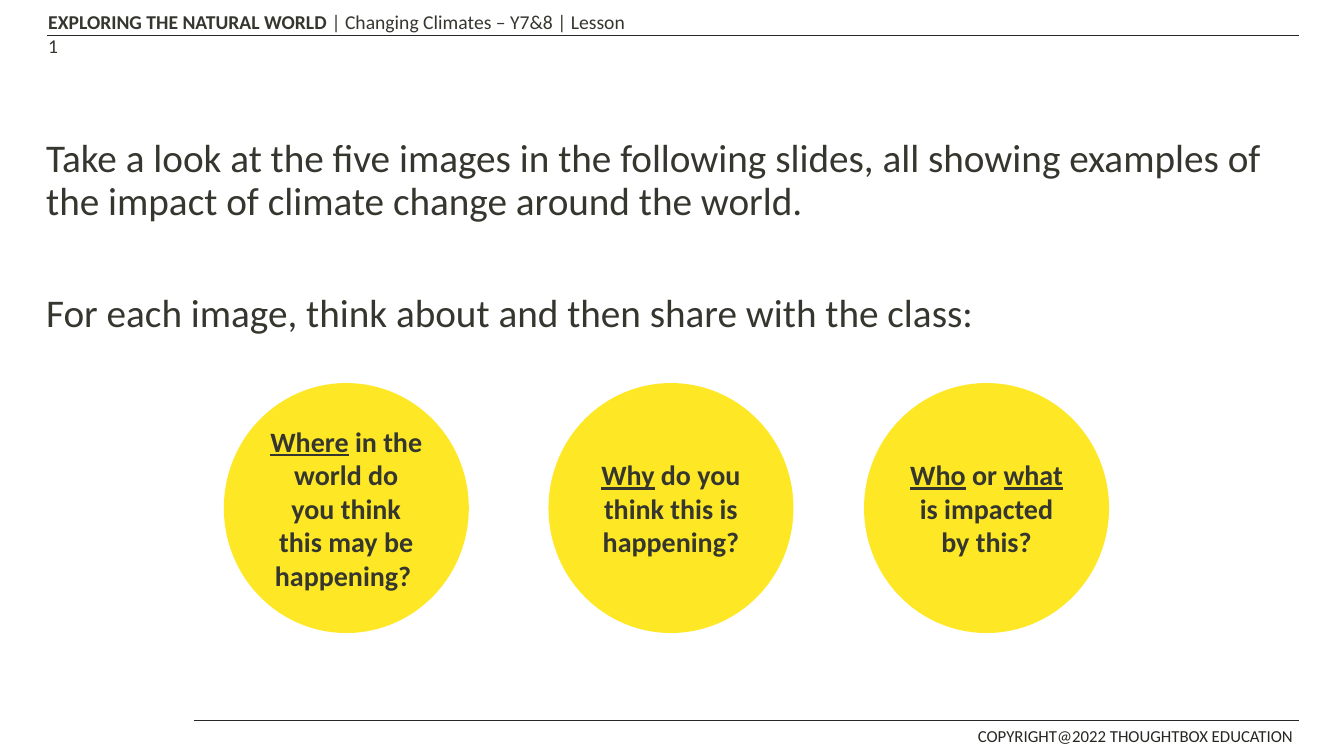
import pptx
import pptx.dml.color
import pptx.enum.shapes
import pptx.enum.text
import pptx.oxml
import pptx.util
from pptx.util import Inches

COLORS = {"text": "35372F", "rule": "252823", "circle": "FEE725", "page": "FFFFFF"}
ALIGN = pptx.enum.text.PP_ALIGN
ANCHOR = pptx.enum.text.MSO_ANCHOR


def rgb(name):
    return pptx.dml.color.RGBColor.from_string(COLORS[name])


class LessonPage:
    """Holds the text style and the slide being drawn."""

    font_name = "Calibri"

    def __init__(self, deck):
        self.page = deck.slides.add_slide(deck.slide_layouts[6])
        self.page.background.fill.solid()
        self.page.background.fill.fore_color.rgb = rgb("page")

    def fill_para(self, para, spans, size, color="text", **para_format):
        """Fill a paragraph from (text, font format) pairs."""
        for name, value in para_format.items():
            setattr(para, name, value)
        for text, extra in spans:
            span = para.add_run()
            span.text = text
            span.font.color.rgb = rgb(color)
            values = {"name": self.font_name, "size": pptx.util.Pt(size), **extra}
            for name, value in values.items():
                setattr(span.font, name, value)

    def text_box(self, left, top, width, height):
        box = self.page.shapes.add_textbox(
            Inches(left), Inches(top), Inches(width), Inches(height))
        box.text_frame.word_wrap = True
        return box.text_frame

    def rule(self, left, right, y):
        line = self.page.shapes.add_connector(
            pptx.enum.shapes.MSO_CONNECTOR.STRAIGHT,
            Inches(left), Inches(y), Inches(right), Inches(y))
        line.line.color.rgb = rgb("rule")
        line.line.width = pptx.util.Pt(1)
        properties = line._element.spPr
        properties.append(pptx.oxml.parse_xml(
            '<a:effectLst xmlns:a="http://schemas.openxmlformats.org/drawingml/2006/main"/>'))

    def question_circle(self, left, spans):
        circle = self.page.shapes.add_shape(
            pptx.enum.shapes.MSO_SHAPE.OVAL,
            Inches(left), Inches(3.8), Inches(2.43), Inches(2.48))
        circle.shadow.inherit = False
        circle.fill.solid()
        circle.fill.fore_color.rgb = rgb("circle")
        circle.line.fill.background()
        frame = circle.text_frame
        frame.word_wrap = True
        frame.vertical_anchor = ANCHOR.MIDDLE
        self.fill_para(frame.paragraphs[0], spans, 20, alignment=ALIGN.CENTER)


def main():
    deck = pptx.Presentation()
    deck.slide_width, deck.slide_height = Inches(13.33), Inches(7.5)
    lesson = LessonPage(deck)

    lesson.rule(0.47, 12.88, 0.35)
    lesson.rule(1.92, 12.88, 7.15)

    footer = lesson.text_box(9.6, 7.15, 3.4, 0.31)
    lesson.fill_para(footer.paragraphs[0],
                     [("COPYRIGHT@2022 THOUGHTBOX EDUCATION", {})], 12, "rule")

    header = lesson.text_box(0.38, 0.05, 5.98, 0.34)
    lesson.fill_para(header.paragraphs[0], [
        ("EXPLORING THE NATURAL WORLD ", {"bold": True}),
        ("| Changing Climates – Y7&8 | Lesson 1", {}),
    ], 14)

    body = lesson.text_box(0.36, 1.33, 12.54, 4.76)
    lesson.fill_para(body.paragraphs[0], [
        ("Take a look at the five images in the following slides, all showing "
         "examples of the impact of climate change around the world.", {}),
    ], 28, line_spacing=0.9)
    lesson.fill_para(body.add_paragraph(), [
        ("For each image, think about and then share with the class:", {}),
    ], 28, line_spacing=0.9, space_before=pptx.util.Pt(50))

    plain = {"bold": True}
    key = {"bold": True, "underline": True}
    questions = [
        (2.22, [("Where", key), (" in the world do you think this may be happening? ", plain)]),
        (5.44, [("Why", key), (" do you think this is happening?", plain)]),
        (8.57, [("Who", key), (" or ", plain), ("what", key),
                (" is impacted by this?", plain)]),
    ]
    for left, spans in questions:
        lesson.question_circle(left, spans)

    deck.save("out.pptx")


if __name__ == "__main__":
    main()
